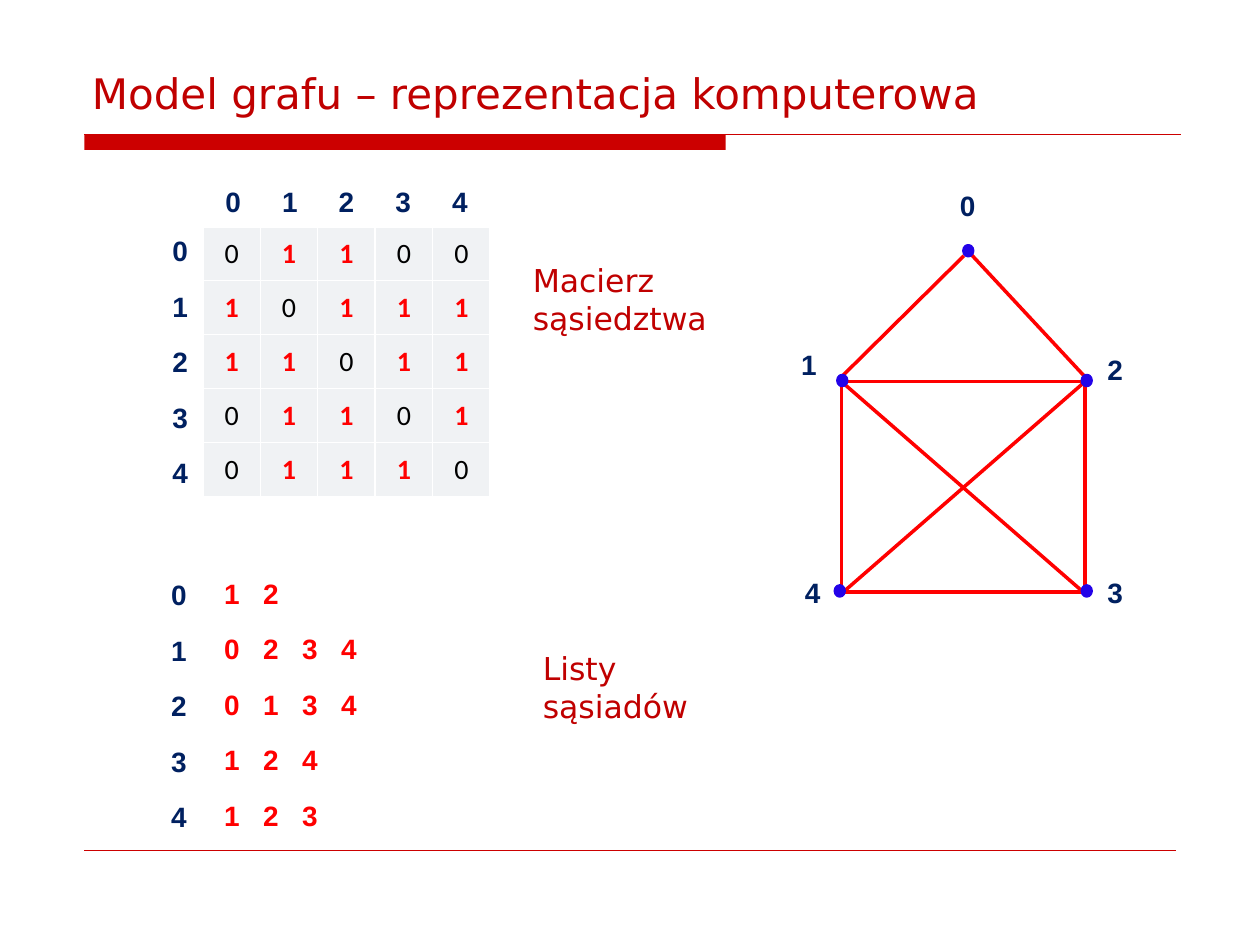
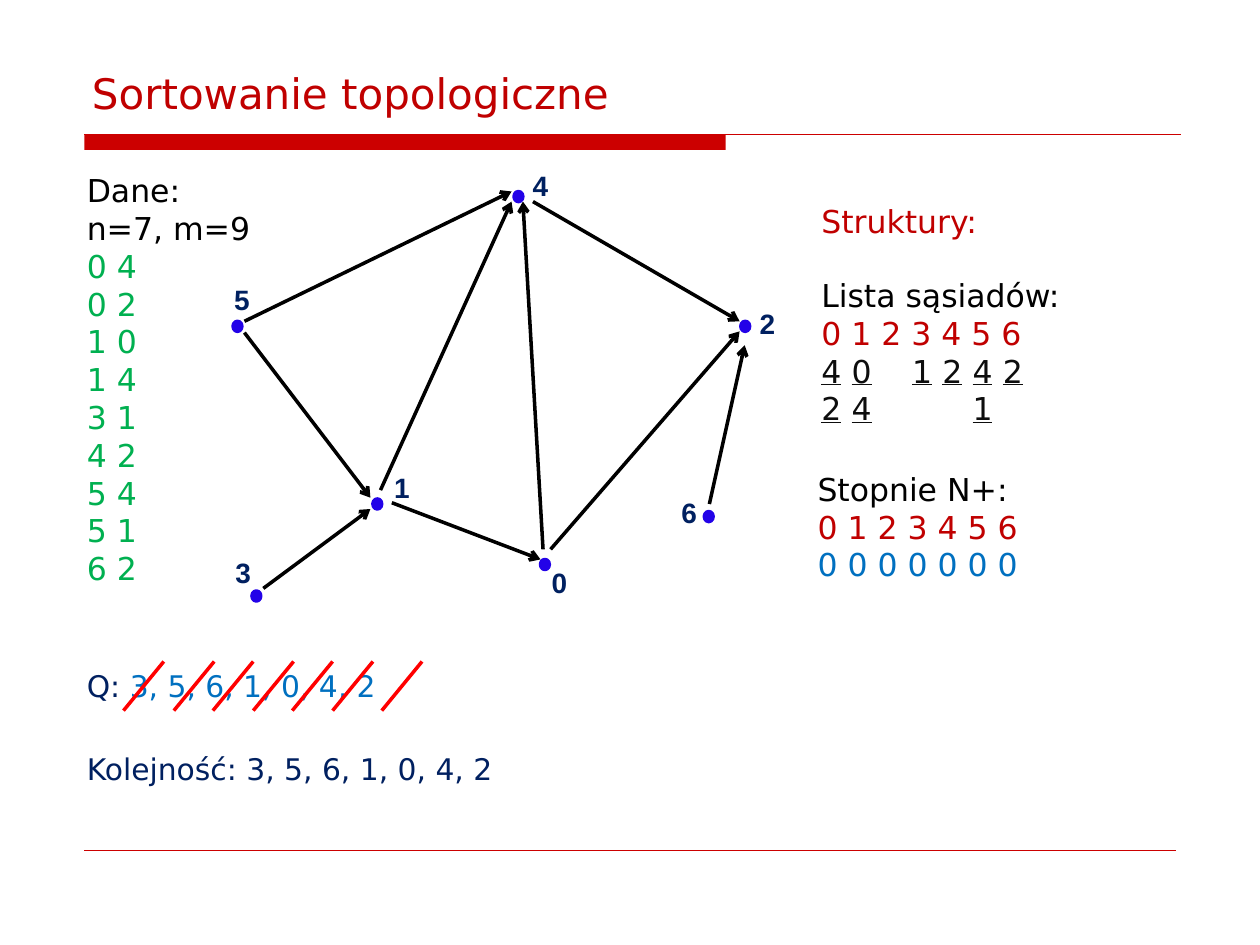
import pptx
import pptx.dml.color
import pptx.enum.shapes
import pptx.enum.text
import pptx.oxml
import pptx.oxml.ns
import pptx.util
import lxml.etree

Inches = pptx.util.Inches
Pt = pptx.util.Pt
RGBColor = pptx.dml.color.RGBColor
Shape = pptx.enum.shapes.MSO_SHAPE
Anchor = pptx.enum.text.MSO_ANCHOR
Align = pptx.enum.text.PP_ALIGN
qn = pptx.oxml.ns.qn

BAND = RGBColor(0xCC, 0x00, 0x00)
TITLE = RGBColor(0xC0, 0x00, 0x00)
RED = RGBColor(0xFF, 0x00, 0x00)
NAVY = RGBColor(0x00, 0x20, 0x60)
BLUE = RGBColor(0x00, 0x70, 0xC0)
GREEN = RGBColor(0x00, 0xB0, 0x50)
NODE = RGBColor(0x23, 0x02, 0xE8)
CELL = RGBColor(0xF0, 0xF2, 0xF4)
BLACK = RGBColor(0x00, 0x00, 0x00)
GREY = RGBColor(0x0D, 0x0D, 0x0D)

SANS = "DejaVu Sans"
LINKS = ["12", "0234", "0134", "124", "123"]


def sub(parent, tag, **attrs):
    return lxml.etree.SubElement(parent, qn(tag), attrs)


def style(font, size, face, color, bold=False):
    font.size = Pt(size)
    font.name = face
    font.bold = bold
    font.color.rgb = color


def write(frame, lines, size=18, face=SANS, bold=False, tab=0):
    for i, (text, color) in enumerate(lines):
        par = frame.add_paragraph() if i else frame.paragraphs[0]
        par.text = text
        if tab:
            stops = sub(par._p.get_or_add_pPr(), "a:tabLst")
            for k in range(1, 7):
                sub(stops, "a:tab", pos=str(Inches(tab * k)), algn="l")
        style(par.font, size, face, color, bold)
    return frame.paragraphs


def box(slide, x, y, w, h, wrap=False):
    frame = slide.shapes.add_textbox(Inches(x), Inches(y), Inches(w), Inches(h)).text_frame
    frame.word_wrap = wrap
    return frame


def label(slide, text, x, y, color=NAVY, w=0.33, tab=0):
    frame = box(slide, x, y, w, 0.35, tab > 0)
    par = write(frame, [(text, color)], 16, "Arial", True, tab)[0]
    par.line_spacing = 0.93


def line(slide, x1, y1, x2, y2, color, width=2, arrow=False):
    link = slide.shapes.add_connector(
        pptx.enum.shapes.MSO_CONNECTOR.STRAIGHT,
        Inches(x1), Inches(y1), Inches(x2), Inches(y2))
    link.line.color.rgb = color
    link.line.width = Pt(width)
    if arrow:
        sub(link.line._get_or_add_ln(), "a:tailEnd", type="arrow")
    sub(link._element.spPr, "a:effectLst")


def shape(slide, kind, x, y, w, h, fill=None, edge=None):
    item = slide.shapes.add_shape(kind, Inches(x), Inches(y), Inches(w), Inches(h))
    item.shadow.inherit = False
    if fill is None:
        item.fill.background()
    else:
        item.fill.solid()
        item.fill.fore_color.rgb = fill
    if edge is None:
        item.line.fill.background()
    else:
        item.line.color.rgb = edge
        item.line.width = Pt(2)


def start(deck, text):
    slide = deck.slides.add_slide(deck.slide_layouts[5])
    shape(slide, Shape.RECTANGLE, 0.67, 1.07, 5.09, 0.12, BAND)
    line(slide, 0.67, 1.07, 9.37, 1.07, BAND, 0.75)
    line(slide, 0.67, 6.75, 9.33, 6.75, BAND, 0.25)
    title = slide.shapes.title
    title.left, title.top = Inches(0.63), Inches(0.33)
    title.width, title.height = Inches(8.75), Inches(0.66)
    title.text_frame.vertical_anchor = Anchor.BOTTOM
    write(title.text_frame, [(text, TITLE)], 24)[0].alignment = Align.LEFT
    return slide


def frame_cell(cell):
    props = cell._tc.get_or_add_tcPr()
    for i, side in enumerate(("a:lnL", "a:lnR", "a:lnT", "a:lnB")):
        edge = pptx.oxml.parse_xml(
            f'<{side} xmlns:a="http://schemas.openxmlformats.org/drawingml/2006/main" w="12700">'
            f'<a:solidFill><a:srgbClr val="FFFFFF"/></a:solidFill></{side}>')
        props.insert(i, edge)


def matrix(slide, x, y):
    count = len(LINKS)
    table = slide.shapes.add_table(
        count, count, Inches(x + 0.34), Inches(y + 0.36), Inches(2.28), Inches(2.14)).table
    table.first_row = table.horz_banding = False
    for i, near in enumerate(LINKS):
        table.rows[i].height = Inches(2.14 / count)
        table.columns[i].width = Inches(2.28 / count)
        label(slide, str(i), x + 0.42 + 0.45 * i, y)
        label(slide, str(i), x, y + 0.39 + 0.44 * i)
        for j in range(count):
            cell = table.cell(i, j)
            cell.fill.solid()
            cell.fill.fore_color.rgb = CELL
            cell.vertical_anchor = Anchor.MIDDLE
            cell.margin_left = cell.margin_right = cell.margin_top = Inches(0.01)
            cell.margin_bottom = 0
            joined = str(j) in near
            entry = [(str(int(joined)), RED if joined else BLACK)]
            write(cell.text_frame, entry, 16, "Calibri", joined)[0].alignment = Align.CENTER
            frame_cell(cell)


def lists(slide, x, y):
    for i, near in enumerate(LINKS):
        top = y + 0.44 * i
        label(slide, str(i), x, top)
        label(slide, "\t".join(near), x + 0.42, top - 0.01, RED, 1.4, 0.31)


def nodes(slide, x, y, spots):
    for name, (left, top, across, down) in enumerate(spots):
        shape(slide, Shape.OVAL, x + left, y + top, 0.07, 0.08, NODE, NODE)
        label(slide, str(name), x + across, y + down)


def lines(slide, x, y, ends, color, arrow=False):
    for x1, y1, x2, y2 in ends:
        line(slide, x + x1, y + y1, x + x2, y + y2, color, 2, arrow)


def house(slide, x, y):
    shape(slide, Shape.RECTANGLE, x + 0.48, y + 1.63, 1.93, 1.67, edge=RED)
    lines(slide, x, y, [
        (0.48, 1.63, 2.41, 3.31), (2.41, 1.63, 0.48, 3.31),
        (1.45, 0.63, 0.49, 1.58), (1.49, 0.6, 2.42, 1.6)], RED)
    nodes(slide, x, y, [
        (1.45, 0.55, 1.32, 0.07), (0.45, 1.58, 0.06, 1.33), (2.39, 1.58, 2.49, 1.37),
        (2.39, 3.25, 2.49, 3.14), (0.43, 3.25, 0.09, 3.14)])


def web(slide, x, y):
    lines(slide, x, y, [
        (0.24, 1.25, 2.36, 0.22), (0.24, 1.34, 1.24, 2.65), (2.61, 3.06, 2.45, 0.3),
        (1.41, 2.69, 2.59, 3.14), (2.67, 3.06, 4.17, 1.33), (2.53, 0.3, 4.17, 1.25),
        (1.32, 2.59, 2.36, 0.3), (0.39, 3.37, 1.24, 2.74), (3.93, 2.7, 4.21, 1.44)],
        BLACK, True)
    nodes(slide, x, y, [
        (2.59, 3.14, 2.58, 3.16), (1.26, 2.66, 1.33, 2.41), (4.18, 1.25, 4.23, 1.11),
        (0.3, 3.39, 0.07, 3.08), (2.38, 0.22, 2.43, 0.01), (0.15, 1.25, 0.06, 0.92),
        (3.89, 2.76, 3.61, 2.61)])


def data(slide, x, y):
    pairs = ["0 4", "0 2", "1 0", "1 4", "3 1", "4 2", "5 4", "5 1", "6 2"]
    write(box(slide, x, y, 1.52, 3.74),
          [("Dane:", BLACK), ("n=7, m=9", BLACK)] + [(pair, GREEN) for pair in pairs])


def queue(slide, x, y):
    pars = write(box(slide, x, y, 8.78, 1.42, True),
                 [("Q: ", NAVY), ("Kolejność: 3, 5, 6, 1, 0, 4, 2", NAVY)], 17)
    run = pars[0].add_run()
    run.text = "3, 5, 6, 1, 0, 4, 2"
    run.font.color.rgb = BLUE
    pars[1].space_before = Pt(27)
    for left in (0.39, 0.79, 1.1, 1.42, 1.73, 2.05, 2.44):
        line(slide, x + left + 0.32, y, x + left, y + 0.39, RED)


def stores(slide, x, y):
    rows = ["40 1242", "24   1"]
    pars = write(box(slide, x + 0.03, y, 2.15, 1.92, True),
                 [("Struktury:", TITLE), ("Lista sąsiadów:", BLACK), ("0 1 2 3 4 5 6", TITLE)]
                 + [("", GREY)] * len(rows), tab=0.24)
    pars[1].space_before = Pt(21)
    for par, row in zip(pars[3:], rows):
        for i, digit in enumerate(row):
            if i:
                par.add_run().text = "\t"
            if digit != " ":
                run = par.add_run()
                run.text = digit
                run.font.underline = True
    write(box(slide, x, y + 2.13, 1.96, 1.01),
          [("Stopnie N+:", BLACK), ("0 1 2 3 4 5 6", TITLE), ("0 0 0 0 0 0 0", BLUE)])


def model(deck):
    slide = start(deck, "Model grafu – reprezentacja komputerowa")
    matrix(slide, 1.27, 1.44)
    lists(slide, 1.26, 4.56)
    write(box(slide, 4.13, 2.02, 1.58, 0.71), [("Macierz", TITLE), ("sąsiedztwa", TITLE)])
    write(box(slide, 4.21, 5.1, 1.35, 0.71), [("Listy", TITLE), ("sąsiadów", TITLE)])
    house(slide, 6.2, 1.4)


def sorting(deck):
    slide = start(deck, "Sortowanie topologiczne")
    web(slide, 1.7, 1.3)
    data(slide, 0.59, 1.31)
    stores(slide, 6.39, 1.55)
    queue(slide, 0.59, 5.25)


def main():
    deck = pptx.Presentation()
    deck.slide_width, deck.slide_height = Inches(10), Inches(7.5)
    model(deck)
    sorting(deck)
    deck.save("out.pptx")


if __name__ == "__main__":
    main()
